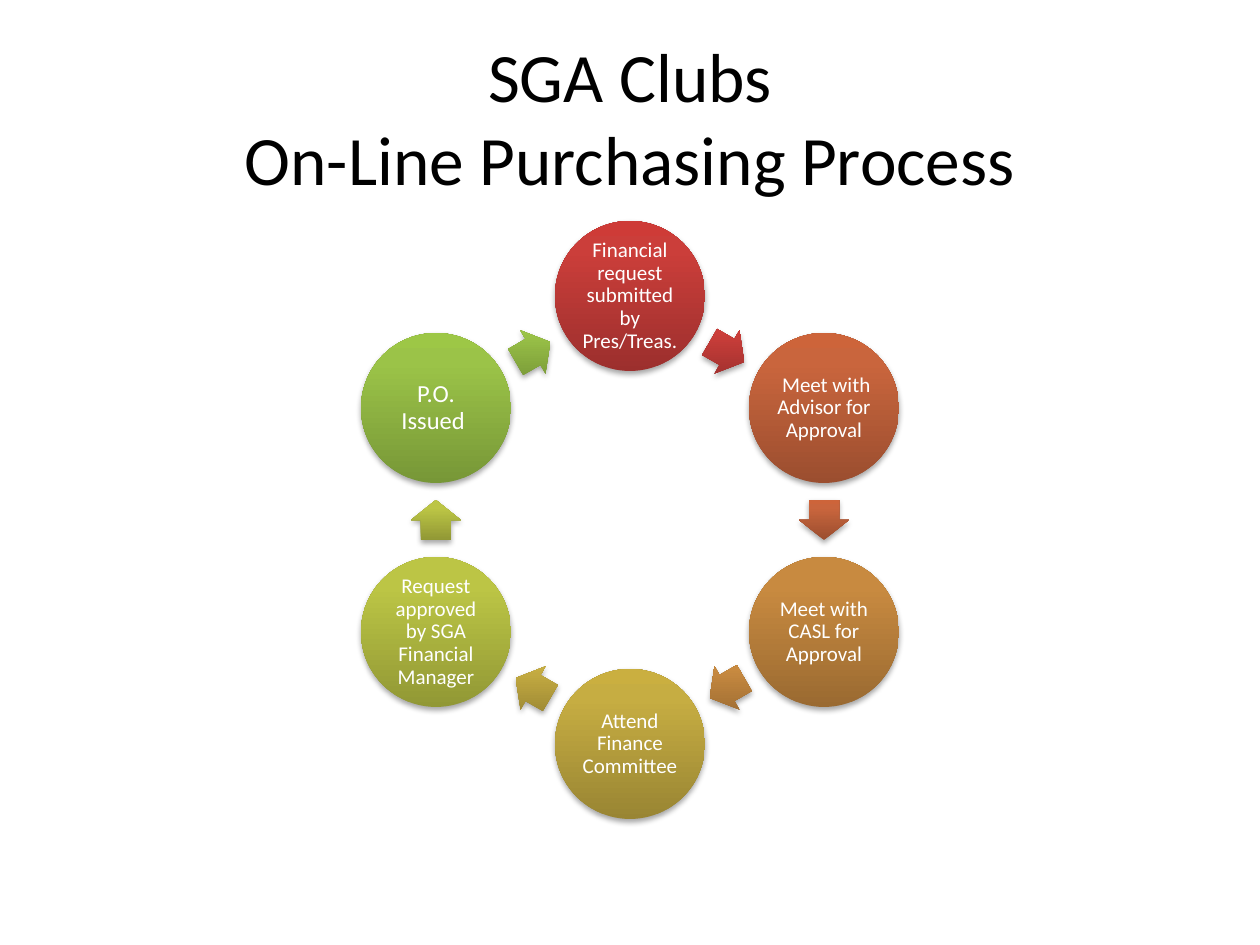
import math

import lxml.etree
import pptx
import pptx.dml.color
import pptx.enum.shapes
import pptx.enum.text
import pptx.oxml
import pptx.oxml.ns
import pptx.util

RGB = pptx.dml.color.RGBColor
SHAPES = pptx.enum.shapes.MSO_SHAPE
BLACK = RGB(0x00, 0x00, 0x00)
WHITE = RGB(0xFF, 0xFF, 0xFF)
FONT = "Calibri"

TITLE = "SGA Clubs\vOn-Line Purchasing Process"

# Clockwise from the top: text, size in points, gradient from bottom to top
STEPS = [
    ("Financial request submitted by Pres/Treas.", 12,
     (RGB(0x9C, 0x2F, 0x2D), RGB(0xCB, 0x3E, 0x3A), RGB(0xCE, 0x3B, 0x37))),
    (" Meet with Advisor for Approval", 12,
     (RGB(0x9B, 0x4E, 0x2F), RGB(0xC9, 0x65, 0x3D), RGB(0xCD, 0x64, 0x3A))),
    ("Meet with CASL for Approval", 12,
     (RGB(0x9A, 0x6A, 0x31), RGB(0xC8, 0x8A, 0x40), RGB(0xCB, 0x8B, 0x3D))),
    ("Attend Finance Committee", 12,
     (RGB(0x99, 0x85, 0x33), RGB(0xC6, 0xAD, 0x42), RGB(0xCA, 0xAF, 0x40))),
    ("Request approved by SGA Financial Manager", 12,
     (RGB(0x91, 0x98, 0x35), RGB(0xBC, 0xC5, 0x45), RGB(0xBF, 0xC8, 0x43))),
    ("P.O. Issued ", 14,
     (RGB(0x77, 0x97, 0x37), RGB(0x9B, 0xC3, 0x48), RGB(0x9D, 0xC7, 0x46))),
]
GRADIENT_STOPS = (0, 80, 100)

EMU_PER_PX = 914400 / 126
SLIDE_W, SLIDE_H = 1260, 945
TITLE_BOX = (63, 38, 1134, 157)
CENTER_X, CENTER_Y, RING_RADIUS = 630, 520, 224
CIRCLE = 150
ARROW_W, ARROW_H = 40, 50
STEP_ANGLE = 360 / len(STEPS)


def px(length):
    return pptx.util.Emu(round(length * EMU_PER_PX))


def write_text(shape, text, size, color, line_spacing=1.0, inset=None):
    frame = shape.text_frame
    frame.word_wrap = True
    frame.vertical_anchor = pptx.enum.text.MSO_ANCHOR.MIDDLE
    if inset is not None:
        frame.margin_left = frame.margin_right = px(inset)
        frame.margin_top = frame.margin_bottom = px(inset)
    paragraph = frame.paragraphs[0]
    paragraph.text = text
    paragraph.alignment = pptx.enum.text.PP_ALIGN.CENTER
    paragraph.line_spacing = line_spacing
    for run in paragraph.runs:
        run.font.name = FONT
        run.font.size = pptx.util.Pt(size)
        run.font.color.rgb = color


def shade(shape, colors):
    """Fill with an upward gradient that ignores rotation, and add a soft shadow below."""
    shape.line.fill.background()
    namespace = pptx.oxml.ns.nsdecls("a")
    stops = "".join(
        f'<a:gs pos="{stop * 1000}"><a:srgbClr val="{color}"/></a:gs>'
        for stop, color in zip(GRADIENT_STOPS, colors))
    gradient = pptx.oxml.parse_xml(
        f'<a:gradFill {namespace} rotWithShape="0"><a:gsLst>{stops}</a:gsLst>'
        '<a:lin ang="16200000" scaled="0"/></a:gradFill>')
    shadow = pptx.oxml.parse_xml(
        f'<a:effectLst {namespace}><a:outerShdw blurRad="40000" dist="23000" '
        'dir="5400000" rotWithShape="0"><a:srgbClr val="000000">'
        '<a:alpha val="35000"/></a:srgbClr></a:outerShdw></a:effectLst>')
    properties = shape.element.spPr
    properties.find(pptx.oxml.ns.qn("a:ln")).addprevious(gradient)
    properties.append(shadow)


def add_centered(slide, preset, center, width, height, colors):
    x, y = center
    shape = slide.shapes.add_shape(
        preset, px(x - width / 2), px(y - height / 2), px(width), px(height))
    shade(shape, colors)
    return shape


def ring_point(degrees, radius):
    """Point at a clockwise angle from the top of the ring."""
    angle = math.radians(degrees)
    return CENTER_X + radius * math.sin(angle), CENTER_Y - radius * math.cos(angle)


def main():
    presentation = pptx.Presentation()
    presentation.slide_width, presentation.slide_height = px(SLIDE_W), px(SLIDE_H)
    slide = presentation.slides.add_slide(presentation.slide_layouts[6])

    title = slide.shapes.add_textbox(*map(px, TITLE_BOX))
    write_text(title, TITLE, size=39.6, color=BLACK)

    arrow_radius = RING_RADIUS * math.cos(math.radians(STEP_ANGLE / 2))
    for index, (text, size, colors) in enumerate(STEPS):
        angle = index * STEP_ANGLE
        circle = add_centered(slide, SHAPES.OVAL, ring_point(angle, RING_RADIUS),
                              CIRCLE, CIRCLE, colors)
        write_text(circle, text, size=size, color=WHITE, line_spacing=0.9, inset=2)

        arrow_angle = angle + STEP_ANGLE / 2
        arrow = add_centered(slide, SHAPES.RIGHT_ARROW,
                             ring_point(arrow_angle, arrow_radius),
                             ARROW_W, ARROW_H, colors)
        arrow.adjustments[0], arrow.adjustments[1] = 0.6, 0.5
        arrow.rotation = arrow_angle

    presentation.save("out.pptx")


if __name__ == "__main__":
    main()
